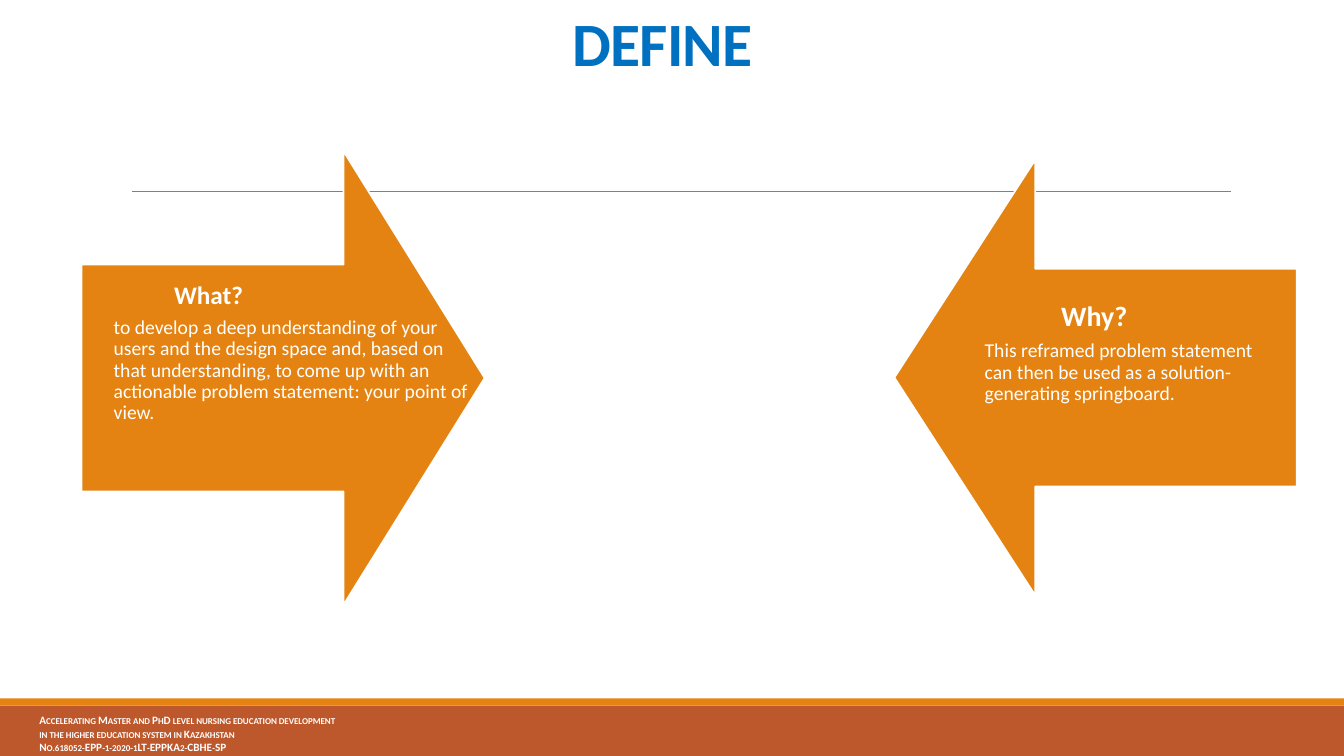
from dataclasses import dataclass

from lxml import etree
from pptx import Presentation
from pptx import util as u
from pptx.dml.color import RGBColor
from pptx.enum import shapes, text
from pptx.oxml import ns

CELL = u.Inches(13.333) / 32


@dataclass(frozen=True)
class Theme:
    font: str = "Calibri"
    white: str = "FFFFFF"
    blue: str = "0070C0"
    orange: str = "E48312"
    rust: str = "BD582C"
    grey: str = "808080"
    title: int = 44
    body: int = 14
    footer: int = 8


THEME = Theme()


def cells(*counts):
    return [u.Emu(round(count * CELL)) for count in counts]


def style(para, size, color, bold=False):
    font = para.font
    font.name, font.size, font.bold = THEME.font, u.Pt(size), bold
    font.color.rgb = RGBColor.from_string(color)


def set_run(para, words, **attributes):
    span = para.add_run()
    span.text = words
    properties = span._r.get_or_add_rPr()
    for name, value in attributes.items():
        properties.set(name, value)


def set_indent(para, columns):
    para._p.get_or_add_pPr().set("marL", str(cells(columns)[0]))


def add_block(page, kind, area, fill, outline=None, rotation=0):
    block = page.shapes.add_shape(kind, *cells(*area))
    block.shadow.inherit = False
    block.fill.solid()
    block.fill.fore_color.rgb = RGBColor.from_string(fill)
    if outline:
        block.line.color.rgb = RGBColor.from_string(outline)
        block.line.width = u.Pt(1.25)
    else:
        block.line.fill.background()
    block.rotation = rotation
    return block


def add_arrow(page, area, rotation):
    arrow = add_block(page, shapes.MSO_SHAPE.DOWN_ARROW, area,
                      THEME.orange, THEME.white, rotation)
    arrow.adjustments[0] = 0.5
    arrow.adjustments[1] = 0.35


def add_rule(page, left, right, row):
    rule = page.shapes.add_connector(
        shapes.MSO_CONNECTOR.STRAIGHT, *cells(left, row, right, row))
    rule.line.color.rgb = RGBColor.from_string(THEME.grey)
    rule.line.width = u.Pt(0.5)
    etree.SubElement(rule._element.spPr, ns.qn("a:effectLst"))


def add_paragraphs(page, area, count):
    box = page.shapes.add_textbox(*cells(*area))
    frame = box.text_frame
    frame.word_wrap = True
    for _ in range(count - 1):
        frame.add_paragraph()
    return frame.paragraphs


def add_footer(page, area, lines):
    for para, words in zip(add_paragraphs(page, area, len(lines)), lines):
        style(para, THEME.footer, THEME.white, bold=True)
        set_run(para, words, cap="small")


def add_answer(page, area, question, size, answer, indents):
    paras = add_paragraphs(page, area, 2)
    rows = zip(paras, (question, answer), (size, THEME.body),
               (True, False), indents)
    for para, words, points, bold, indent in rows:
        set_indent(para, indent)
        para.line_spacing = 0.9
        style(para, points, THEME.white, bold)
        set_run(para, words)
    paras[0].space_after = u.Pt(size * 0.3)


def set_title(page, area, words):
    title = page.shapes.title
    title.left, title.top, title.width, title.height = cells(*area)
    frame = title.text_frame
    frame.word_wrap = True
    frame.auto_size = text.MSO_AUTO_SIZE.NONE
    frame.vertical_anchor = text.MSO_ANCHOR.BOTTOM
    para = frame.paragraphs[0]
    para.alignment = text.PP_ALIGN.CENTER
    para.line_spacing = 0.85
    style(para, THEME.title, THEME.blue, bold=True)
    set_run(para, words, spc="-50")


def main():
    deck = Presentation()
    deck.slide_width, deck.slide_height = cells(32, 18)
    page = deck.slides.add_slide(deck.slide_layouts[5])

    rectangle = shapes.MSO_SHAPE.RECTANGLE
    add_block(page, rectangle, (0, 16.8, 32, 1.2), THEME.rust)
    add_block(page, rectangle, (0, 16.63, 32, 0.17), THEME.orange)
    add_rule(page, 3.14, 29.3, 4.56)
    add_footer(page, (0.7, 16.87, 11.02, 1.13), (
        "Accelerating Master and PhD level nursing education development",
        "in the higher education system in Kazakhstan",
        "No.618052-EPP-1-2020-1LT-EPPKA2-CBHE-SP",
    ))
    set_title(page, (0.98, -0.1, 29.59, 2.11), "DEFINE")

    add_arrow(page, (1.34, 4.2, 10.8, 9.6), 270)
    add_arrow(page, (20.9, 4.2, 10.37, 9.58), 90)
    add_answer(
        page, (1.87, 6.62, 9.58, 3.7), "What?", 18,
        "to develop a deep understanding of your users and the design space "
        "and, based on that understanding, to come up with an actionable "
        "problem statement: your point of view.", (2.04, 0.6))
    add_answer(
        page, (23.21, 7.08, 7.54, 2.78), "Why?", 20,
        "This reframed problem statement can then be used as a "
        "solution-generating springboard.", (1.82, 0))

    deck.save("out.pptx")


if __name__ == "__main__":
    main()
